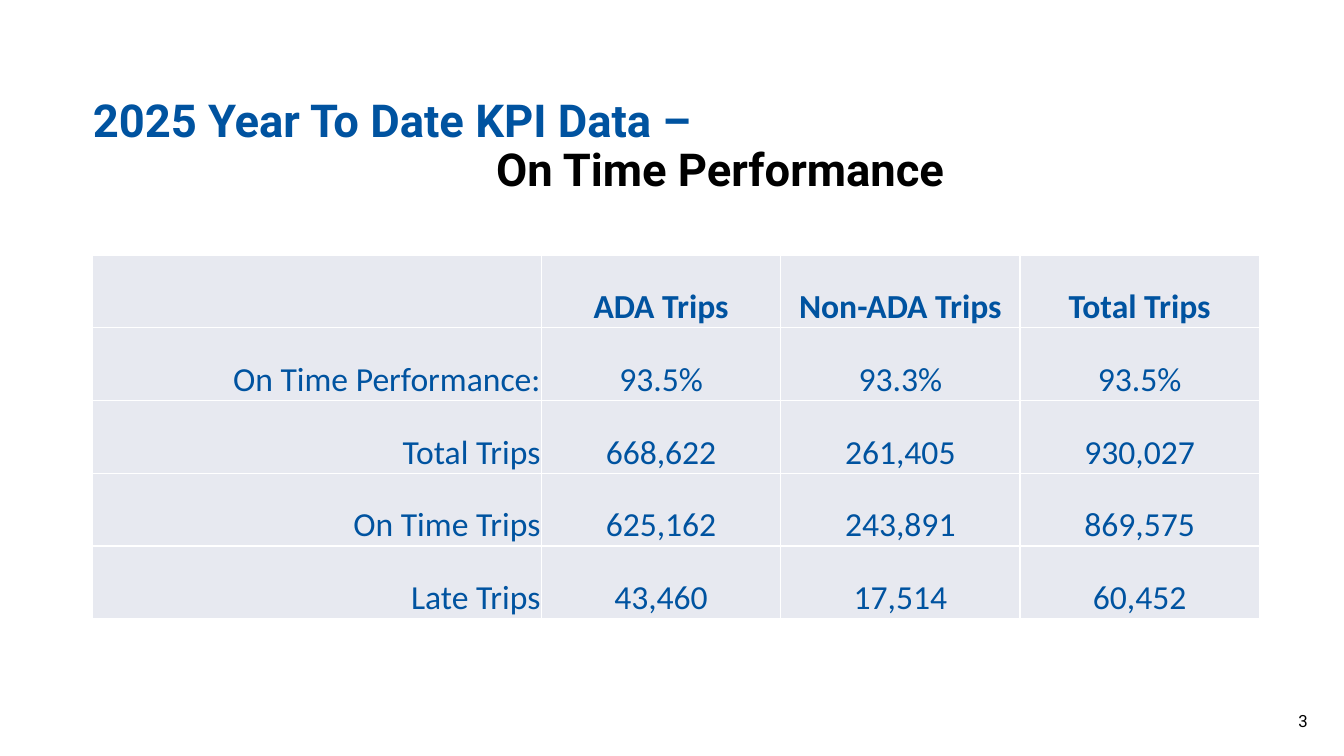
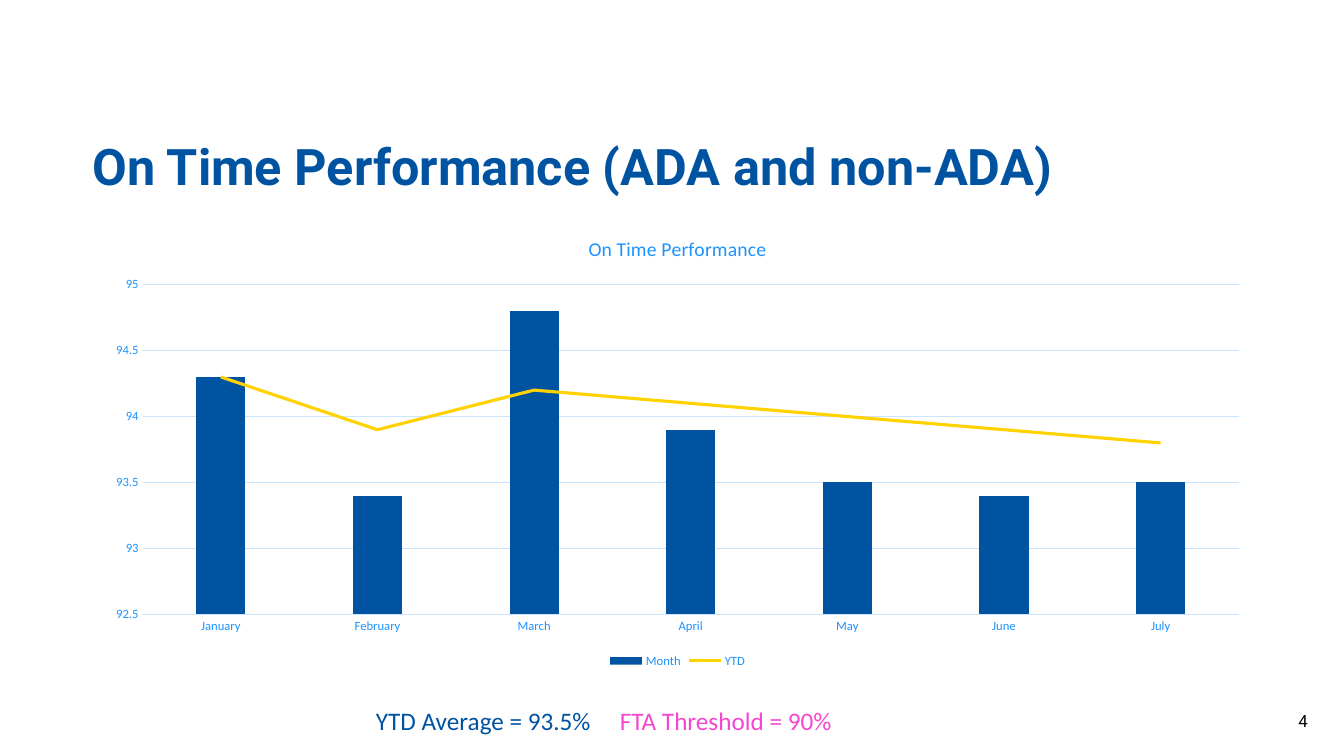
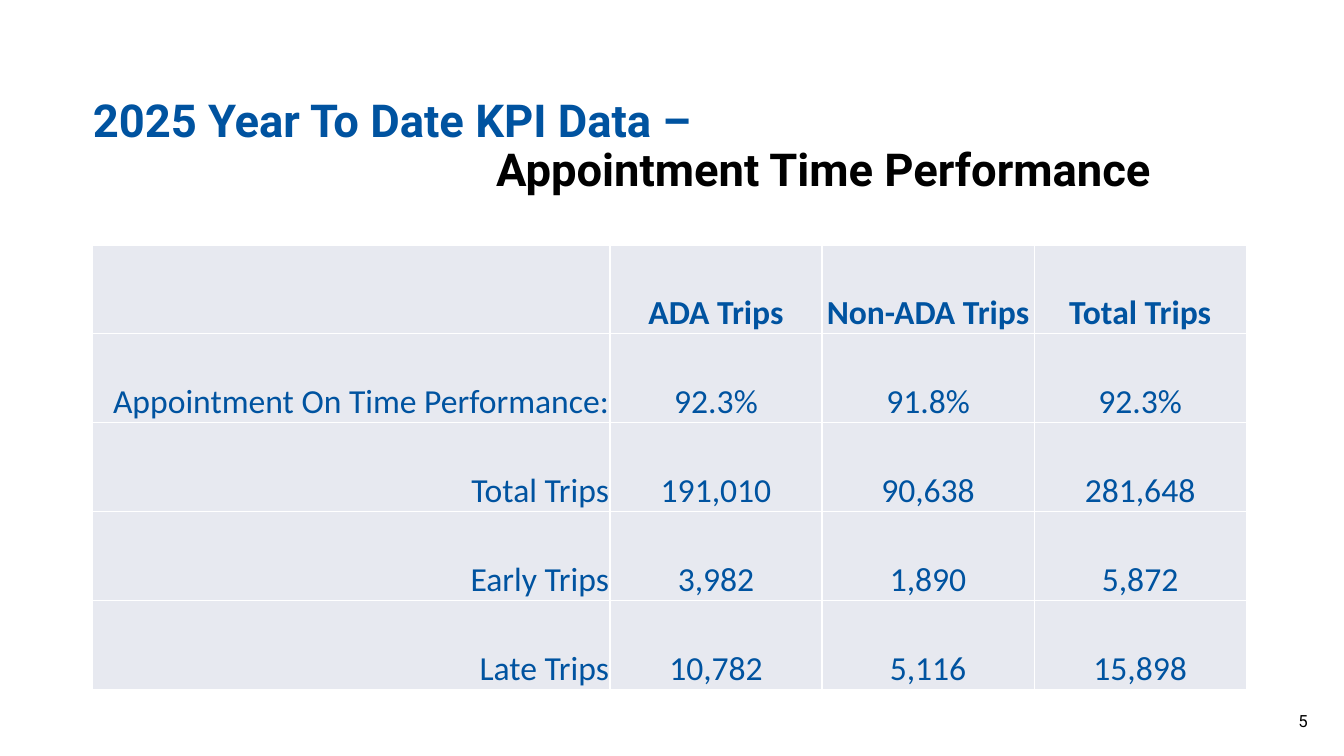
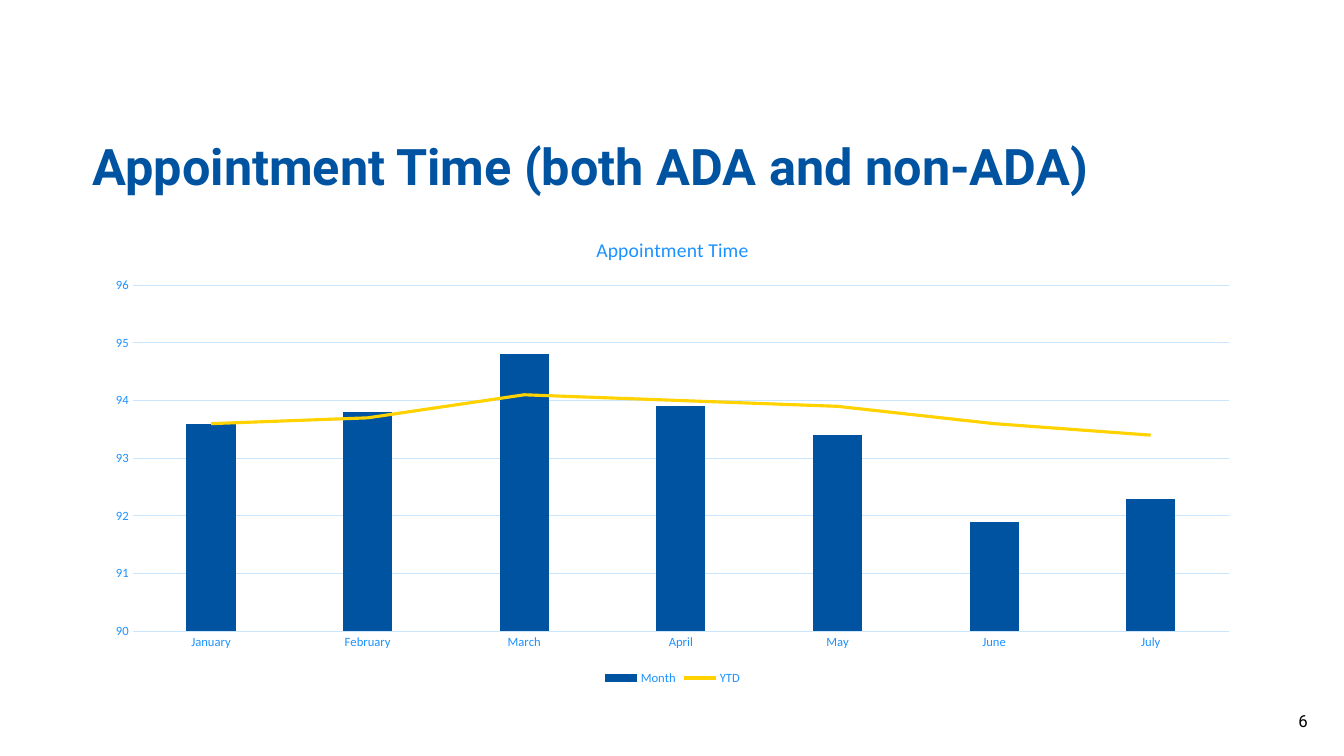
from lxml.etree import SubElement
from pptx import Presentation
from pptx.chart.data import CategoryChartData
from pptx.dml.color import RGBColor
from pptx.enum.chart import (XL_CHART_TYPE as ChartType, XL_LEGEND_POSITION as LegendPos,
                             XL_MARKER_STYLE as Marker, XL_TICK_MARK as Tick)
from pptx.enum.text import MSO_ANCHOR as Anchor, MSO_AUTO_SIZE as AutoSize, PP_ALIGN as Align
from pptx.oxml import parse_xml
from pptx.oxml.ns import nsdecls, qn
from pptx.util import Inches, Pt

# Shared look
BLUE, SKY, PALE_SKY = "0053A0", "1C92FF", "CAE6FF"
YELLOW, PINK, BLACK, WHITE, CELL_GRAY = "FFD200", "F446CF", "000000", "FFFFFF", "E7E9F0"
HEADING_FONT, BODY_FONT = "Roboto", "Calibri"
TITLE_BOX = (0.92, 0.67, 11.57, 1.33)
NUMBER_BOX = (11.37, 6.95, 1.6, 0.4)
SUBTITLE_INDENT = 4
FIRST_NUMBER = 3
MONTHS = ["January", "February", "March", "April", "May", "June", "July"]


def rgb(hex_color):
    return RGBColor.from_string(hex_color)


def inches(box):
    return [Inches(length) for length in box]


def style_font(font, size, color, name=BODY_FONT, bold=False):
    font.name, font.size, font.bold = name, Pt(size), bold
    font.color.rgb = rgb(color)


def add_run(paragraph, text, *style, **options):
    run = paragraph.add_run()
    run.text = text
    style_font(run.font, *style, **options)


def set_margins(target, left, top, right, bottom):
    target.margin_left, target.margin_top = Inches(left), Inches(top)
    target.margin_right, target.margin_bottom = Inches(right), Inches(bottom)


def add_title(slide, box, heading, size, subtitle=None):
    """Blue heading, with an optional black line indented below it."""
    title = slide.shapes.title
    title.left, title.top, title.width, title.height = inches(box)
    frame = title.text_frame
    frame.auto_size, frame.word_wrap = AutoSize.NONE, True
    frame.vertical_anchor = Anchor.BOTTOM
    set_margins(frame, 0, 0.4, 0, 0.05)
    first = frame.paragraphs[0]
    add_run(first, heading, size, BLUE, HEADING_FONT, bold=True)
    if subtitle:
        second = frame.add_paragraph()
        second._p.get_or_add_pPr().set("marL", str(Inches(SUBTITLE_INDENT)))
        add_run(second, subtitle, size, BLACK, HEADING_FONT, bold=True)
    for line in frame.paragraphs:
        line.alignment, line.line_spacing = Align.LEFT, 0.9


def add_number(slide, box, number):
    frame = slide.shapes.add_textbox(*inches(box)).text_frame
    frame.word_wrap, frame.vertical_anchor = True, Anchor.MIDDLE
    set_margins(frame, 0.1, 0.05, 0, 0.05)
    line = frame.paragraphs[0]
    line.alignment = Align.RIGHT
    add_run(line, str(number), 12, BLACK, HEADING_FONT)


def add_borders(cell, color, width):
    properties = cell._tc.get_or_add_tcPr()
    for side in ("lnL", "lnR", "lnT", "lnB"):
        border = SubElement(properties, qn(f"a:{side}"), w=str(Pt(width)))
        SubElement(SubElement(border, qn("a:solidFill")), qn("a:srgbClr"), val=color)


def add_kpi_table(slide, box, label_width, rows):
    """Trips table: a label column and equal value columns."""
    header = ("", "ADA Trips", "Non-ADA Trips", "Total Trips")
    rows = [header, *rows]
    table = slide.shapes.add_table(len(rows), len(header), *inches(box)).table
    value_width = (box[2] - label_width) / (len(header) - 1)
    for index, column in enumerate(table.columns):
        column.width = Inches(value_width if index else label_width)
    for row_index, values in enumerate(rows):
        table.rows[row_index].height = Inches(box[3] / len(rows))
        for column_index, value in enumerate(values):
            cell = table.cell(row_index, column_index)
            add_borders(cell, WHITE, 1)
            cell.fill.solid()
            cell.fill.fore_color.rgb = rgb(CELL_GRAY)
            cell.vertical_anchor = Anchor.BOTTOM
            set_margins(cell, 0.01, 0.01, 0.01, 0)
            if value:
                line = cell.text_frame.paragraphs[0]
                line.alignment = Align.CENTER if column_index else Align.RIGHT
                add_run(line, value, 24, BLUE, bold=row_index == 0)


def move_last_series_to_line(chart):
    """Turn the last column series into a line on the same axes."""
    bars = chart._chartSpace.find(".//" + qn("c:barChart"))
    series = bars.findall(qn("c:ser"))[-1]
    for bar_only in series.findall(qn("c:invertIfNegative")):
        series.remove(bar_only)
    lines = parse_xml(f'<c:lineChart {nsdecls("c")}><c:grouping val="standard"/>'
                      '<c:varyColors val="0"/><c:marker val="1"/></c:lineChart>')
    lines.insert(2, series)
    for axis in bars.findall(qn("c:axId")):
        SubElement(lines, qn("c:axId"), val=axis.get("val"))
    bars.addnext(lines)


def style_line(line, color, width):
    line.color.rgb = rgb(color)
    line.width = Pt(width)


def add_trend_chart(slide, box, heading, scale, month, ytd):
    """Monthly columns with the year-to-date line."""
    data = CategoryChartData(number_format="General")
    data.categories = MONTHS
    data.add_series("Month", month)
    data.add_series("YTD", ytd)
    chart = slide.shapes.add_chart(ChartType.COLUMN_CLUSTERED, *inches(box), data).chart
    style_font(chart.font, 10, BLUE)
    move_last_series_to_line(chart)

    # Heading and legend
    chart.has_title = True
    add_run(chart.chart_title.text_frame.paragraphs[0], heading, 14, SKY)
    chart.has_legend = True
    chart.legend.position = LegendPos.BOTTOM
    chart.legend.include_in_layout = False
    style_font(chart.legend.font, 9, SKY)

    # Series
    columns, trend = chart.plots
    columns.gap_width, columns.overlap = 219, -27
    columns.vary_by_categories = False
    fill = columns.series[0].format.fill
    fill.solid()
    fill.fore_color.rgb = rgb(BLUE)
    ytd_line = trend.series[0]
    ytd_line.smooth = False
    ytd_line.marker.style = Marker.NONE
    style_line(ytd_line.format.line, YELLOW, 2.25)

    # Axes
    for axis in (chart.category_axis, chart.value_axis):
        axis.major_tick_mark = axis.minor_tick_mark = Tick.NONE
        style_font(axis.tick_labels.font, 9, SKY)
    style_line(chart.category_axis.format.line, PALE_SKY, 0.75)
    values = chart.value_axis
    values.minimum_scale, values.maximum_scale, values.major_unit = scale
    values.format.line.fill.background()
    values.has_major_gridlines = True
    style_line(values.major_gridlines.format.line, PALE_SKY, 0.75)


def add_threshold_note(slide, box, average, threshold, tab):
    frame = slide.shapes.add_textbox(*inches(box)).text_frame
    frame.word_wrap = True
    line = frame.paragraphs[0]
    stops = SubElement(line._p.get_or_add_pPr(), qn("a:tabLst"))
    SubElement(stops, qn("a:tab"), pos=str(Inches(tab)), algn="l")
    add_run(line, average + "\t", 18, BLUE)
    add_run(line, threshold, 18, PINK)


def main():
    prs = Presentation()
    prs.slide_width, prs.slide_height = Inches(13.33), Inches(7.5)

    def new_slide(heading, size, subtitle=None):
        slide = prs.slides.add_slide(prs.slide_layouts[5])
        add_title(slide, TITLE_BOX, heading, size, subtitle)
        add_number(slide, NUMBER_BOX, FIRST_NUMBER + len(prs.slides) - 1)
        return slide

    kpi_heading = "2025 Year To Date KPI Data –"

    # On time: table
    slide = new_slide(kpi_heading, 32.4, "On Time Performance")
    add_kpi_table(slide, (0.92, 2.53, 11.57, 3.61), 4.45, [
        ("On Time Performance:", "93.5%", "93.3%", "93.5%"),
        ("Total Trips", "668,622", "261,405", "930,027"),
        ("On Time Trips", "625,162", "243,891", "869,575"),
        ("Late Trips", "43,460", "17,514", "60,452"),
    ])

    # On time: chart
    slide = new_slide("On Time Performance (ADA and non-ADA)", 36)
    add_threshold_note(slide, (3.63, 6.95, 4.9, 0.4),
                       "YTD Average = 93.5%", "FTA Threshold = 90%", 2.42)
    add_trend_chart(slide, (0.92, 2.16, 11.6, 4.51), "On Time Performance", (92.5, 95, 0.5),
                    month=[94.3, 93.4, 94.8, 93.9, 93.5, 93.4, 93.5],
                    ytd=[94.3, 93.9, 94.2, 94.1, 94.0, 93.9, 93.8])

    # Appointments: table
    slide = new_slide(kpi_heading, 32.4, "Appointment Time Performance")
    add_kpi_table(slide, (0.92, 2.43, 11.44, 4.41), 5.13, [
        ("Appointment On Time Performance:", "92.3%", "91.8%", "92.3%"),
        ("Total Trips", "191,010", "90,638", "281,648"),
        ("Early Trips", "3,982", "1,890", "5,872"),
        ("Late Trips", "10,782", "5,116", "15,898"),
    ])

    # Appointments: chart
    slide = new_slide("Appointment Time (both ADA and non-ADA)", 36)
    add_trend_chart(slide, (0.92, 2.16, 11.5, 4.68), "Appointment Time", (90, 96, 1),
                    month=[93.6, 93.8, 94.8, 93.9, 93.4, 91.9, 92.3],
                    ytd=[93.6, 93.7, 94.1, 94.0, 93.9, 93.6, 93.4])

    prs.save("out.pptx")


if __name__ == "__main__":
    main()
